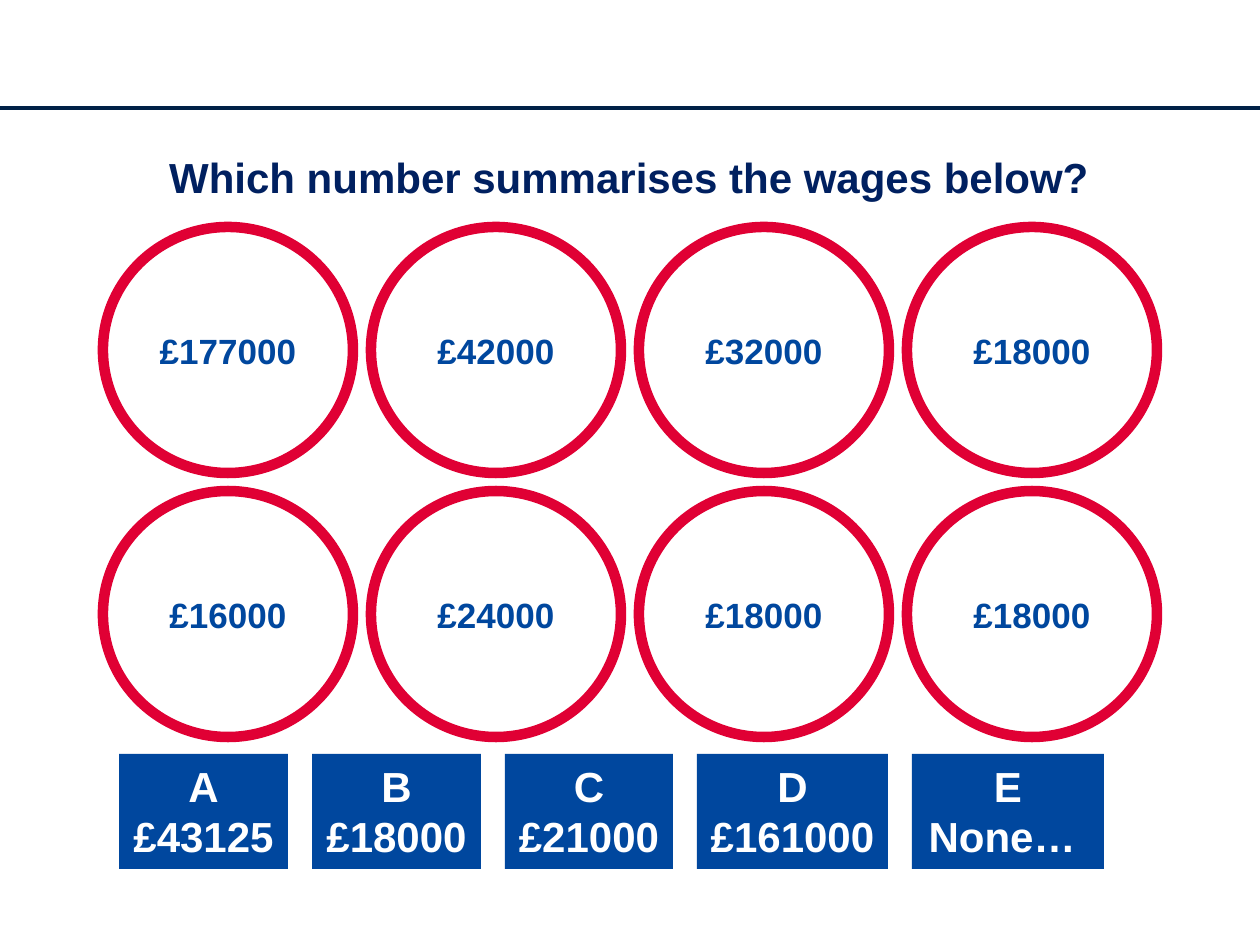
import pptx
import pptx.dml.color
import pptx.enum.shapes
import pptx.enum.text
import pptx.oxml
import pptx.util
from dataclasses import dataclass

PX = 914400 / 126  # EMU in one px
SHAPE = pptx.enum.shapes.MSO_SHAPE
ANCHOR = pptx.enum.text.MSO_ANCHOR
AUTO_SIZE = pptx.enum.text.MSO_AUTO_SIZE


@dataclass(frozen=True)
class Theme:
    font: str = "Arial"
    rule: str = "002147"
    title: str = "002060"
    blue: str = "00479E"
    red: str = "E00034"
    white: str = "FFFFFF"
    large: int = 24
    medium: int = 20
    rule_width: float = 2.25
    ring_width: float = 6


THEME = Theme()

WAGES = [
    ["£177000", "£42000", "£32000", "£18000"],
    ["£16000", "£24000", "£18000", "£18000"],
]
# Letter, value, box width
ANSWERS = [
    ("A", "£43125", 169),
    ("B", "£18000", 169),
    ("C", "£21000", 168),
    ("D", "£161000", 191),
    ("E", "None… ", 192),
]


def emu(*lengths):
    return [round(length * PX) for length in lengths]


def color(value):
    return pptx.dml.color.RGBColor.from_string(value)


def write(shape, lines, size, text_color, anchor):
    frame = shape.text_frame
    frame.word_wrap = True
    frame.vertical_anchor = anchor
    frame.text = "\n".join(lines)
    for paragraph in frame.paragraphs:
        paragraph.alignment = pptx.enum.text.PP_ALIGN.CENTER
        paragraph.font.name = THEME.font
        paragraph.font.size = pptx.util.Pt(size)
        paragraph.font.bold = True
        paragraph.font.color.rgb = color(text_color)


def add_filled_shape(shapes, kind, box, fill):
    shape = shapes.add_shape(kind, *emu(*box))
    shape.shadow.inherit = False
    shape.fill.solid()
    shape.fill.fore_color.rgb = color(fill)
    shape.line.fill.background()
    return shape


def add_header_rule(slide, left, top, width):
    rule = slide.shapes.add_connector(
        pptx.enum.shapes.MSO_CONNECTOR.STRAIGHT, *emu(left, top, left + width, top))
    rule.line.color.rgb = color(THEME.rule)
    rule.line.width = pptx.util.Pt(THEME.rule_width)
    rule._element.spPr.append(pptx.oxml.parse_xml(
        '<a:effectLst xmlns:a="http://schemas.openxmlformats.org/drawingml/2006/main"/>'))


def add_title(slide, left, top, width, height):
    title = slide.shapes.title
    title.left, title.top, title.width, title.height = emu(left, top, width, height)
    write(title, ["Which number summarises the wages below?"],
          THEME.large, THEME.title, ANCHOR.TOP)
    title.text_frame.auto_size = AUTO_SIZE.SHAPE_TO_FIT_TEXT


def add_wage_circles(slide, left, top, width, height, gap=18):
    column_width = (width + gap) // len(WAGES[0])
    row_height = (height + gap) // len(WAGES)
    group = slide.shapes.add_group_shape()
    for row, wages in enumerate(WAGES):
        for column, wage in enumerate(wages):
            box = (left + column * column_width, top + row * row_height,
                   column_width - gap, row_height - gap)
            circle = add_filled_shape(
                group.shapes, SHAPE.FLOWCHART_CONNECTOR, box, THEME.white)
            circle.line.color.rgb = color(THEME.red)
            circle.line.width = pptx.util.Pt(THEME.ring_width)
            write(circle, [wage], THEME.medium, THEME.blue, ANCHOR.MIDDLE)


def add_answers(slide, left, top, height, gap=24):
    for letter, value, width in ANSWERS:
        answer = add_filled_shape(
            slide.shapes, SHAPE.RECTANGLE, (left, top, width, height), THEME.blue)
        write(answer, [letter, value], THEME.large, THEME.white, ANCHOR.TOP)
        answer.text_frame.auto_size = AUTO_SIZE.SHAPE_TO_FIT_TEXT
        left += width + gap


def main():
    presentation = pptx.Presentation()
    presentation.slide_width, presentation.slide_height = emu(1260, 945)
    title_only = presentation.slide_layouts[5]
    slide = presentation.slides.add_slide(title_only)

    # Header rule and question
    add_header_rule(slide, 0, 108, 1260)
    add_title(slide, 109, 145, 1040, 63)
    # Wages in a grid of rings
    add_wage_circles(slide, 103, 227, 1054, 510)
    # Answer choices
    add_answers(slide, 119, 754, 115)

    presentation.save("out.pptx")


if __name__ == "__main__":
    main()
